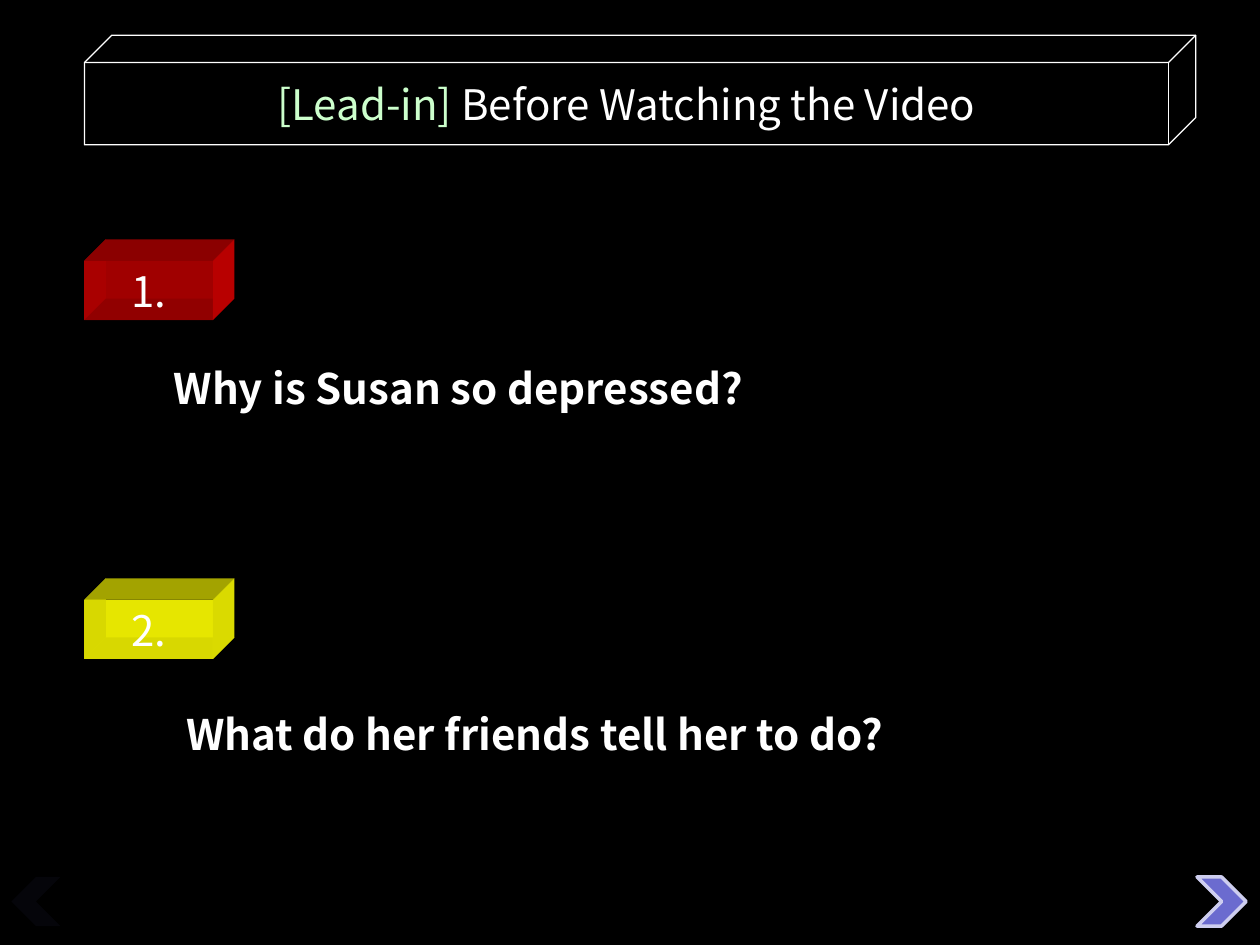
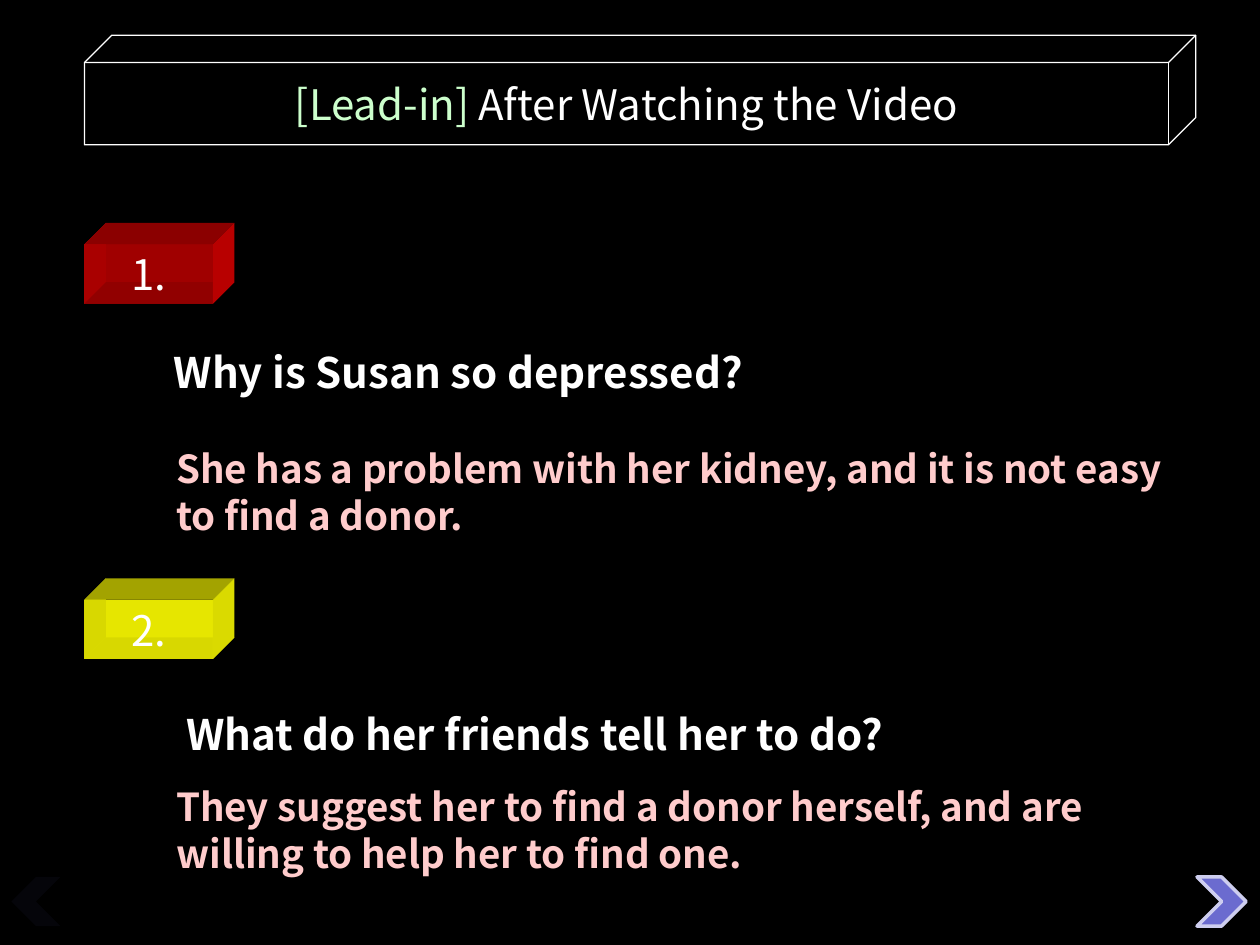
from lxml.etree import SubElement
from pptx import Presentation
from pptx.dml.color import RGBColor
from pptx.enum.shapes import MSO_SHAPE as Preset
from pptx.enum.text import MSO_ANCHOR as Anchor, PP_ALIGN as Align
from pptx.oxml.ns import qn
from pptx.util import Inches, Pt

SLIDE_WIDTH, SLIDE_HEIGHT = Inches(10), Inches(7.5)
CELL = SLIDE_WIDTH // 100
FONT = "Noto Sans CJK KR"
BLACK, WHITE, GREEN, PINK = "000000", "FFFFFF", "CCFFCC", "FFCCCC"
RED_FACES = {"back": "A00000", "left": "C00000", "bottom": "700000",
             "top": "8B0000", "right": "B80000", "front": "A00000"}
YELLOW_FACES = {"back": "E6E600", "left": "B8B800", "bottom": "B8B800",
                "top": "A3A300", "right": "DADA00", "front": "E6E600"}
BANNER = (6.7, 2.8, 88.2, 8.7)
BANNER_DEPTH = 0.25
TAG_SIZE = (10.2, 4.7)
TAG_DEPTH = 1.7
ARROW_SIDE = 3.9
ARROW_TOP = 69.6
MARGIN = 6.7

QUESTIONS = [
    ("1.", "Why is Susan so depressed?", RED_FACES, 6.1),
    ("2.", "What do her friends tell her to do?", YELLOW_FACES, 7.1),
]
SLIDES = [
    ("Before Watching the Video", [(20.7, 7.6, None, None), (47.6, 8.1, None, None)]),
    ("After Watching the Video", [
        (19.4, 7.6, 15.4, "She has a problem with her kidney, and it is not easy to find a donor."),
        (47.6, 8.1, 14.0, "They suggest her to find a donor herself, and are willing to help her to find one."),
    ]),
]


def color(hex_code):
    return RGBColor.from_string(hex_code)


def cells(*lengths):
    return [round(length * CELL) for length in lengths]


def paint(shape, fill=None, line=None, width=0.75, opacity=None):
    shape.shadow.inherit = False
    if fill:
        shape.fill.solid()
        shape.fill.fore_color.rgb = color(fill)
        if opacity:
            tint = shape.fill._xPr.find(qn("a:solidFill"))[0]
            SubElement(tint, qn("a:alpha"), val=str(opacity * 1000))
    else:
        shape.fill.background()
    if line:
        shape.line.color.rgb = color(line)
        shape.line.width = Pt(width)
    else:
        shape.line.fill.background()


def write(shape, runs, size=24, bold=False, align=Align.LEFT, anchor=Anchor.MIDDLE,
          wrap=False, spacing=None):
    frame = shape.text_frame
    frame.word_wrap = wrap
    frame.vertical_anchor = anchor
    paragraph = frame.paragraphs[0]
    paragraph.alignment = align
    if spacing:
        paragraph.line_spacing = Pt(spacing)
    for text, hex_code in runs:
        run = paragraph.add_run()
        run.text = text
        run.font.name = FONT
        run.font.size = Pt(size)
        run.font.bold = bold
        run.font.color.rgb = color(hex_code)


def add_banner(slide, box, heading):
    left, top, width, height = box
    depth = height * BANNER_DEPTH
    banner = slide.shapes.add_shape(Preset.CUBE, *cells(*box))
    banner.adjustments[0] = BANNER_DEPTH
    paint(banner, line=WHITE)
    title = slide.shapes.title
    title.left, title.top, title.width, title.height = cells(
        left, top + depth, width - depth, height - depth)
    write(title, [("[Lead-in] ", GREEN), (heading, WHITE)], align=Align.CENTER)


def add_tag(slide, left, top, number, faces):
    width, height = TAG_SIZE
    right, bottom = left + width, top + height
    front = [(left, top), (right, top), (right, bottom), (left, bottom)]
    back = [(x + TAG_DEPTH, y - TAG_DEPTH) for x, y in front]
    sides = {
        "back": front,
        "left": [front[0], back[0], back[3], front[3]],
        "bottom": [front[3], back[3], back[2], front[2]],
        "top": [front[0], back[0], back[1], front[1]],
        "right": [front[1], back[1], back[2], front[2]],
    }
    for side, corners in sides.items():
        start, *others = [cells(*corner) for corner in corners]
        builder = slide.shapes.build_freeform(*start)
        builder.add_line_segments(others, close=True)
        paint(builder.convert_to_shape(), faces[side])
    label = slide.shapes.add_shape(Preset.RECTANGLE, *cells(left, top, width, height))
    paint(label, faces["front"], opacity=70)
    write(label, [(number, WHITE)], align=Align.CENTER)


def add_question(slide, left, top, question, placement):
    number, wording, faces, indent = question
    drop, answer_drop, answer = placement
    add_tag(slide, left, top, number, faces)
    prompt = slide.shapes.add_textbox(*cells(left + indent, top + drop, 64, 5))
    write(prompt, [(wording, WHITE)], bold=True)
    if answer:
        reply = slide.shapes.add_textbox(*cells(left + 6.3, top + answer_drop, 83.5, 8.4))
        write(reply, [(answer, PINK)], size=22, bold=True, anchor=Anchor.TOP,
              wrap=True, spacing=26.7)


def add_arrows(slide, top):
    previous, following = [
        slide.shapes.add_shape(Preset.CHEVRON, *cells(left, top, ARROW_SIDE, ARROW_SIDE))
        for left in (0.9, 95)
    ]
    previous.rotation = 180
    paint(previous, "05050A")
    paint(following, "6B6BCF", "CECEEF", 2)


def add_lead_in(deck, heading, placements):
    slide = deck.slides.add_slide(deck.slide_layouts.get_by_name("Title Only"))
    add_banner(slide, BANNER, heading)
    for question, (top, *placement) in zip(QUESTIONS, placements):
        add_question(slide, MARGIN, top, question, placement)
    add_arrows(slide, ARROW_TOP)


def main():
    deck = Presentation()
    deck.slide_width, deck.slide_height = SLIDE_WIDTH, SLIDE_HEIGHT
    backdrop = deck.slide_master.background.fill
    backdrop.solid()
    backdrop.fore_color.rgb = color(BLACK)
    for heading, placements in SLIDES:
        add_lead_in(deck, heading, placements)
    deck.save("out.pptx")


if __name__ == "__main__":
    main()
